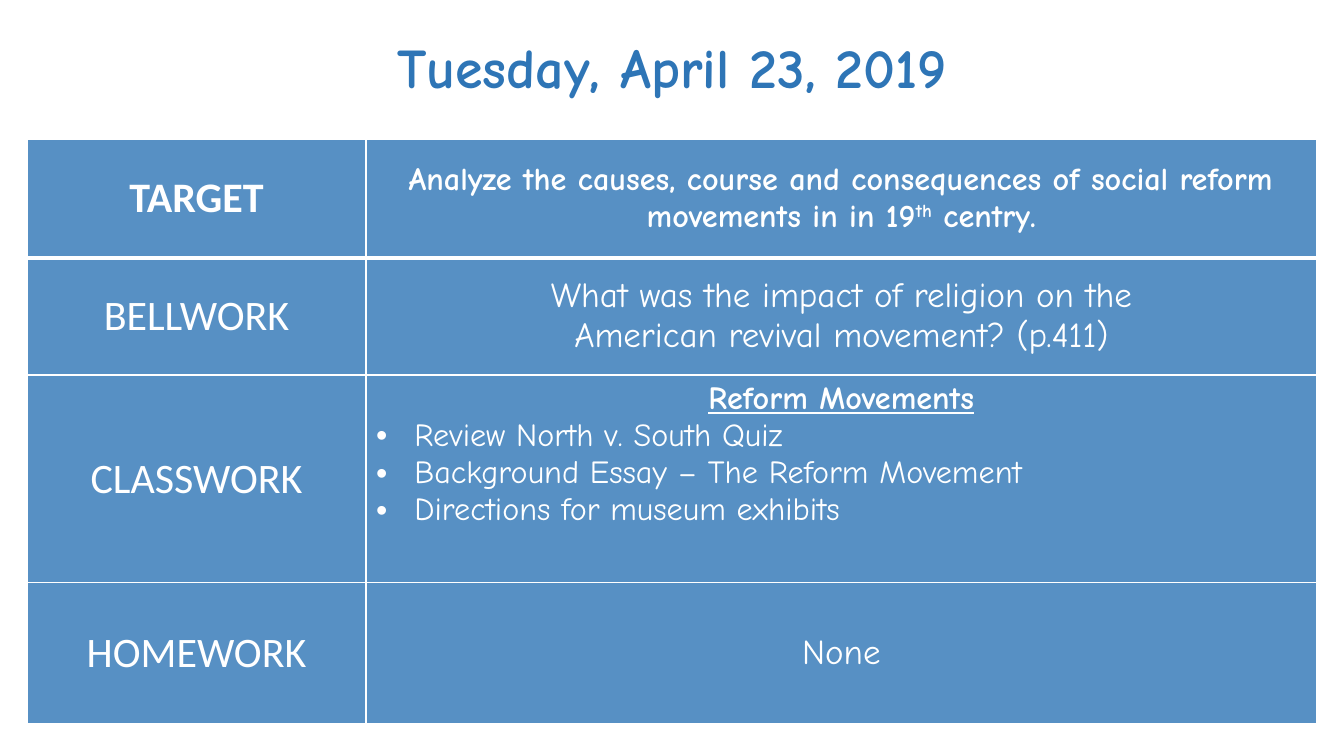
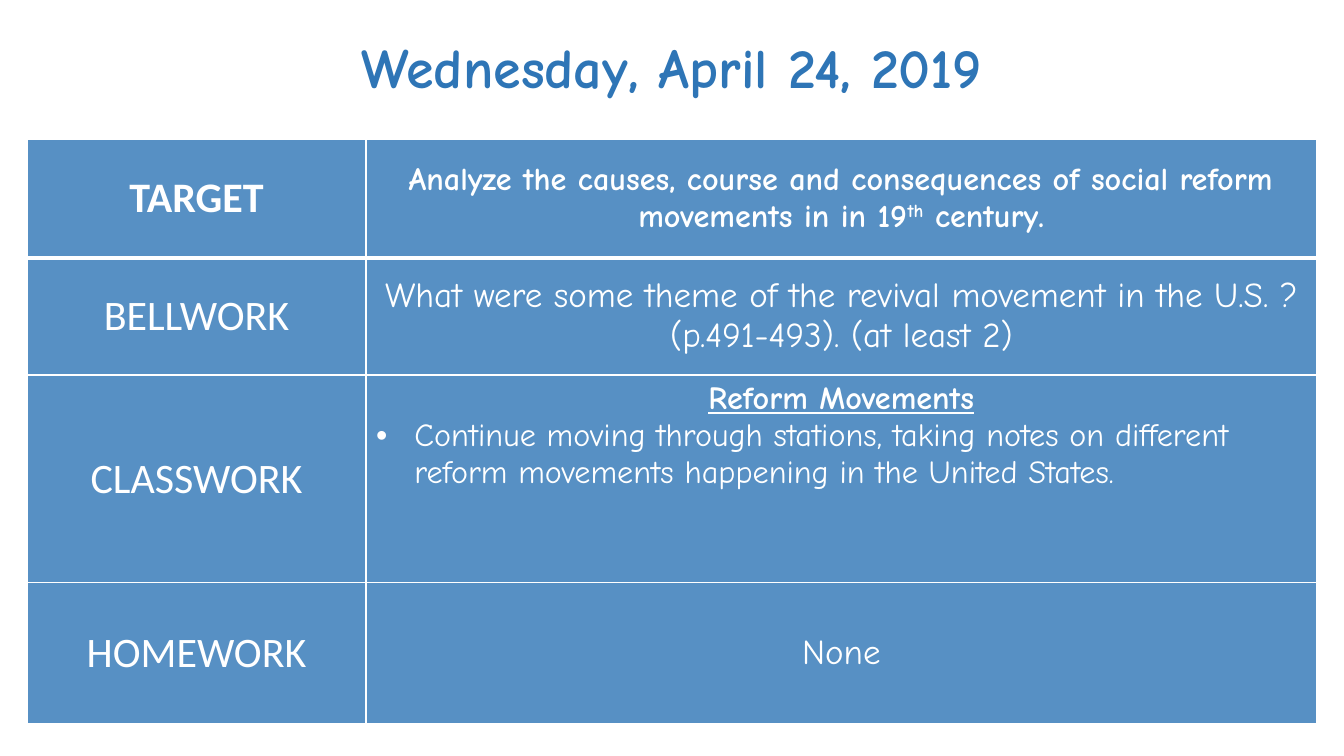
from lxml.etree import SubElement
from pptx import Presentation
from pptx.dml.color import RGBColor
from pptx.enum.text import MSO_ANCHOR as Anchor, MSO_AUTO_SIZE as AutoSize, PP_ALIGN as Align
from pptx.oxml.ns import qn
from pptx.util import Inches, Pt

# Shared look
BLUE = RGBColor(0x2E, 0x75, 0xB6)
WHITE = RGBColor(0xFF, 0xFF, 0xFF)
LABEL_FONT, TEXT_FONT = "Calibri", "Comic Neue"
TITLE_SIZE, LABEL_SIZE, TEXT_SIZE, DETAIL_SIZE = 40, 30, 25, 23

# Shared layout: left, top, width, height in inches
TITLE_BOX = (0.27, 0.16, 12.79, 1)
AGENDA_BOX = (0.27, 1.38, 12.79, 5.8)
LABEL_WIDTH = 3.36
ROW_HEIGHTS = (1.18, 1.16, 2.06, 1.4)
LABELS = ("TARGET", "BELLWORK", "CLASSWORK", "HOMEWORK")
BULLET_INDENT = Inches(0.38)

TARGET_START = "Analyze the causes, course and consequences of social reform movements in in 19"
DAYS = [
    {
        "date": "Tuesday, April 23, 2019",
        "target": (TARGET_START, "th", " centry."),
        "bellwork": ["What was the impact of religion on the",
                     "American revival movement? (p.411)"],
        "classwork": ["Review North v. South Quiz",
                      "Background Essay – The Reform Movement",
                      "Directions for museum exhibits"],
    },
    {
        "date": "Wednesday, April 24, 2019",
        "target": (TARGET_START, "th", " century."),
        "bellwork": ["What were some theme of the revival movement in the U.S. ? "
                     "(p.491-493). (at least 2)"],
        "classwork": ["Continue moving through stations, taking notes on different "
                      "reform movements happening in the United States."],
    },
]


def fill_with(fill, color, opacity):
    """Solid fill with an opacity in percent."""
    fill.solid()
    fill.fore_color.rgb = color
    color_xml = fill._xPr.find(qn("a:solidFill"))[0]
    SubElement(color_xml, qn("a:alpha"), val=str(opacity * 1000))


def format_runs(paragraph, size, font=TEXT_FONT, color=WHITE, bold=False):
    for run in paragraph.runs:
        run.font.name, run.font.size = font, Pt(size)
        run.font.color.rgb, run.font.bold = color, bold


def write_lines(cell, lines, size, font=TEXT_FONT, bold=False):
    """Centred lines, one paragraph each."""
    cell.text_frame.text = "\n".join(lines)
    for paragraph in cell.text_frame.paragraphs:
        paragraph.alignment = Align.CENTER
        format_runs(paragraph, size, font, bold=bold)


def add_bullet(paragraph):
    paragraph.alignment = Align.LEFT
    properties = paragraph._p.get_or_add_pPr()
    properties.set("marL", str(BULLET_INDENT))
    properties.set("indent", str(-BULLET_INDENT))
    SubElement(properties, qn("a:buFont"), typeface="Arial")
    SubElement(properties, qn("a:buChar"), char="•")


def set_borders(cell, top, bottom):
    """White borders; top and bottom widths in points."""
    properties = cell._tc.get_or_add_tcPr()
    for side, width in (("L", 1), ("R", 1), ("T", top), ("B", bottom)):
        line = SubElement(properties, qn(f"a:ln{side}"), w=str(Pt(width)))
        SubElement(SubElement(line, qn("a:solidFill")), qn("a:srgbClr"), val=str(WHITE))


def write_target(cell, parts):
    paragraph = cell.text_frame.paragraphs[0]
    paragraph.alignment = Align.CENTER
    for part in parts:
        paragraph.add_run().text = part
    format_runs(paragraph, DETAIL_SIZE, bold=True)
    paragraph.runs[1]._r.get_or_add_rPr().set("baseline", "30000")


def write_classwork(cell, tasks):
    write_lines(cell, ["Reform Movements", *tasks], DETAIL_SIZE)
    cell.vertical_anchor = Anchor.TOP
    heading, *bullets = cell.text_frame.paragraphs
    heading.runs[0].font.bold = heading.runs[0].font.underline = True
    for paragraph in bullets:
        add_bullet(paragraph)


def place_title(title, text, box):
    title.left, title.top, title.width, title.height = map(Inches, box)
    fill_with(title.fill, WHITE, 65)
    frame = title.text_frame
    frame.text = text
    frame.auto_size, frame.vertical_anchor = AutoSize.NONE, Anchor.MIDDLE
    frame.paragraphs[0].alignment = Align.CENTER
    format_runs(frame.paragraphs[0], TITLE_SIZE, color=BLUE, bold=True)


def add_agenda(slide, day, box):
    """Table of the day's work: labels on the left, details on the right."""
    table = slide.shapes.add_table(len(LABELS), 2, *map(Inches, box)).table
    table.first_row = table.horz_banding = False
    table.columns[0].width = Inches(LABEL_WIDTH)
    table.columns[1].width = Inches(box[2] - LABEL_WIDTH)

    for index, (label, height) in enumerate(zip(LABELS, ROW_HEIGHTS)):
        table.rows[index].height = Inches(height)
        for cell in table.rows[index].cells:
            set_borders(cell, top=3 if index == 1 else 1, bottom=3 if index == 0 else 1)
            fill_with(cell.fill, BLUE, 80)
            cell.vertical_anchor = Anchor.MIDDLE
        write_lines(table.cell(index, 0), [label], LABEL_SIZE, LABEL_FONT, bold=index == 0)

    write_target(table.cell(0, 1), day["target"])
    write_lines(table.cell(1, 1), day["bellwork"], TEXT_SIZE)
    write_classwork(table.cell(2, 1), day["classwork"])
    write_lines(table.cell(3, 1), ["None"], TEXT_SIZE)


def add_day_slide(presentation, day):
    title_only = presentation.slide_layouts[5]
    slide = presentation.slides.add_slide(title_only)
    place_title(slide.shapes.title, day["date"], TITLE_BOX)
    add_agenda(slide, day, AGENDA_BOX)


def main():
    presentation = Presentation()
    presentation.slide_width, presentation.slide_height = Inches(13.33), Inches(7.5)
    for day in DAYS:
        add_day_slide(presentation, day)
    presentation.save("out.pptx")


if __name__ == "__main__":
    main()
